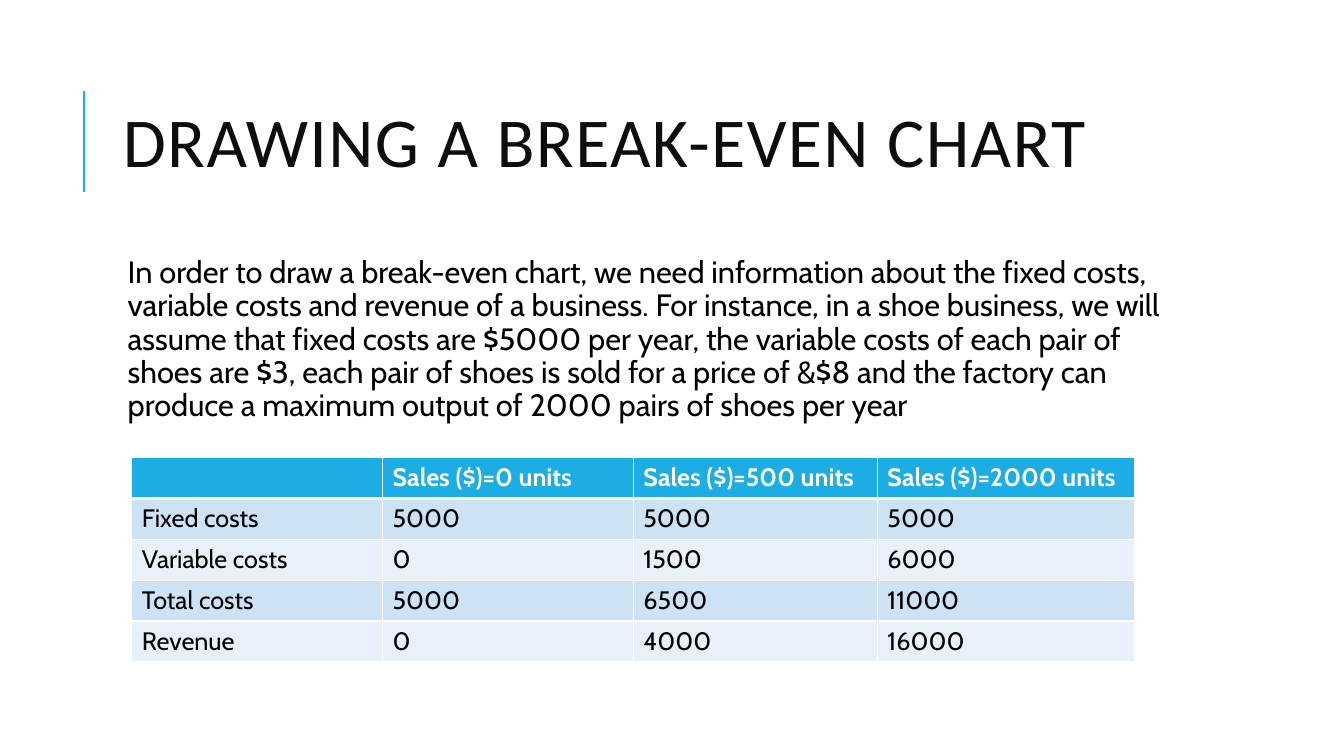
from lxml.etree import SubElement
from pptx import Presentation
from pptx.dml.color import RGBColor
from pptx.enum.shapes import MSO_CONNECTOR
from pptx.enum.text import MSO_ANCHOR, MSO_AUTO_SIZE, PP_ALIGN
from pptx.oxml.ns import qn
from pptx.util import Cm, Pt

TITLE = "DRAWING A BREAK-EVEN CHART"
BODY = (
    "In order to draw a break-even chart, we need information about the fixed costs, "
    "variable costs and revenue of a business. For instance, in a shoe business, we will "
    "assume that fixed costs are $5000 per year, the variable costs of each pair of shoes "
    "are $3, each pair of shoes is sold for a price of &$8 and the factory can produce a "
    "maximum output of 2000 pairs of shoes per year"
)
COST_ROWS = [
    ("", "Sales ($)=0 units", "Sales ($)=500 units", "Sales ($)=2000 units"),
    ("Fixed costs", "5000", "5000", "5000"),
    ("Variable costs", "0", "1500", "6000"),
    ("Total costs", "5000", "6500", "11000"),
    ("Revenue", "0", "4000", "16000"),
]
COLUMN_WIDTHS = [Cm(6.32), Cm(6.32), Cm(6.15), Cm(6.48)]
ROW_HEIGHT = Cm(1.03)
TEXT_LEFT, TEXT_WIDTH = Cm(2.84), Cm(27)

ACCENT = RGBColor(0x1C, 0xAD, 0xE4)
BAND_DARK = RGBColor(0xCD, 0xE3, 0xF5)
BAND_LIGHT = RGBColor(0xE8, 0xF1, 0xFA)
TITLE_INK = RGBColor(0x0D, 0x0D, 0x0D)
BLACK = RGBColor(0, 0, 0)
WHITE = RGBColor(0xFF, 0xFF, 0xFF)


def style_font(font, name, size, color, bold=False):
    font.name, font.size, font.bold = name, Pt(size), bold
    font.color.rgb = color


def add_accent_line(slide):
    line = slide.shapes.add_connector(
        MSO_CONNECTOR.STRAIGHT, Cm(2.12), Cm(4.83), Cm(2.12), Cm(2.29))
    line.line.color.rgb = ACCENT
    line.line.width = Pt(1.5)
    SubElement(line.element.spPr, qn("a:effectLst"))


def format_title(title):
    title.left, title.top = TEXT_LEFT, Cm(1.63)
    title.width, title.height = TEXT_WIDTH, Cm(4.17)
    frame = title.text_frame
    frame.text = TITLE
    frame.vertical_anchor = MSO_ANCHOR.MIDDLE
    frame.auto_size = MSO_AUTO_SIZE.NONE
    paragraph = frame.paragraphs[0]
    paragraph.alignment = PP_ALIGN.LEFT
    paragraph.line_spacing = 0.8
    style_font(paragraph.font, "Calibri", 50, TITLE_INK)
    paragraph.runs[0].font._element.set("spc", "100")


def add_body(slide):
    frame = slide.shapes.add_textbox(TEXT_LEFT, Cm(6.35), TEXT_WIDTH, Cm(4.6)).text_frame
    frame.word_wrap = True
    frame.margin_left = Cm(0.38)
    frame.margin_top = frame.margin_right = frame.margin_bottom = Cm(0.13)
    frame.text = BODY
    paragraph = frame.paragraphs[0]
    paragraph.line_spacing = 0.9
    style_font(paragraph.font, "Cabin", 22, BLACK)


def set_borders(cell, **widths):
    """Draw white cell borders; widths are points keyed by side L, R, T, B."""
    properties = cell._tc.get_or_add_tcPr()
    for side, width in widths.items():
        border = SubElement(properties, qn(f"a:ln{side}"), w=str(Pt(width)))
        fill = SubElement(border, qn("a:solidFill"))
        SubElement(fill, qn("a:srgbClr"), val=str(WHITE))


def add_cost_table(slide):
    table = slide.shapes.add_table(
        len(COST_ROWS), len(COLUMN_WIDTHS), Cm(3.32), Cm(11.53),
        sum(COLUMN_WIDTHS), ROW_HEIGHT * len(COST_ROWS)).table
    for column, width in zip(table.columns, COLUMN_WIDTHS):
        column.width = width
    for r, values in enumerate(COST_ROWS):
        table.rows[r].height = ROW_HEIGHT
        header = r == 0
        band = ACCENT if header else BAND_DARK if r % 2 else BAND_LIGHT
        for c, value in enumerate(values):
            cell = table.cell(r, c)
            cell.text = value
            style_font(cell.text_frame.paragraphs[0].font, "Cabin", 18,
                       WHITE if header else BLACK, header)
            set_borders(cell, L=1, R=1, T=3 if r == 1 else 1, B=3 if header else 1)
            cell.fill.solid()
            cell.fill.fore_color.rgb = band


def main():
    presentation = Presentation()
    presentation.slide_width, presentation.slide_height = Cm(33.87), Cm(19.05)
    slide = presentation.slides.add_slide(presentation.slide_layouts[5])
    add_accent_line(slide)
    format_title(slide.shapes.title)
    add_body(slide)
    add_cost_table(slide)
    presentation.save("out.pptx")


if __name__ == "__main__":
    main()
